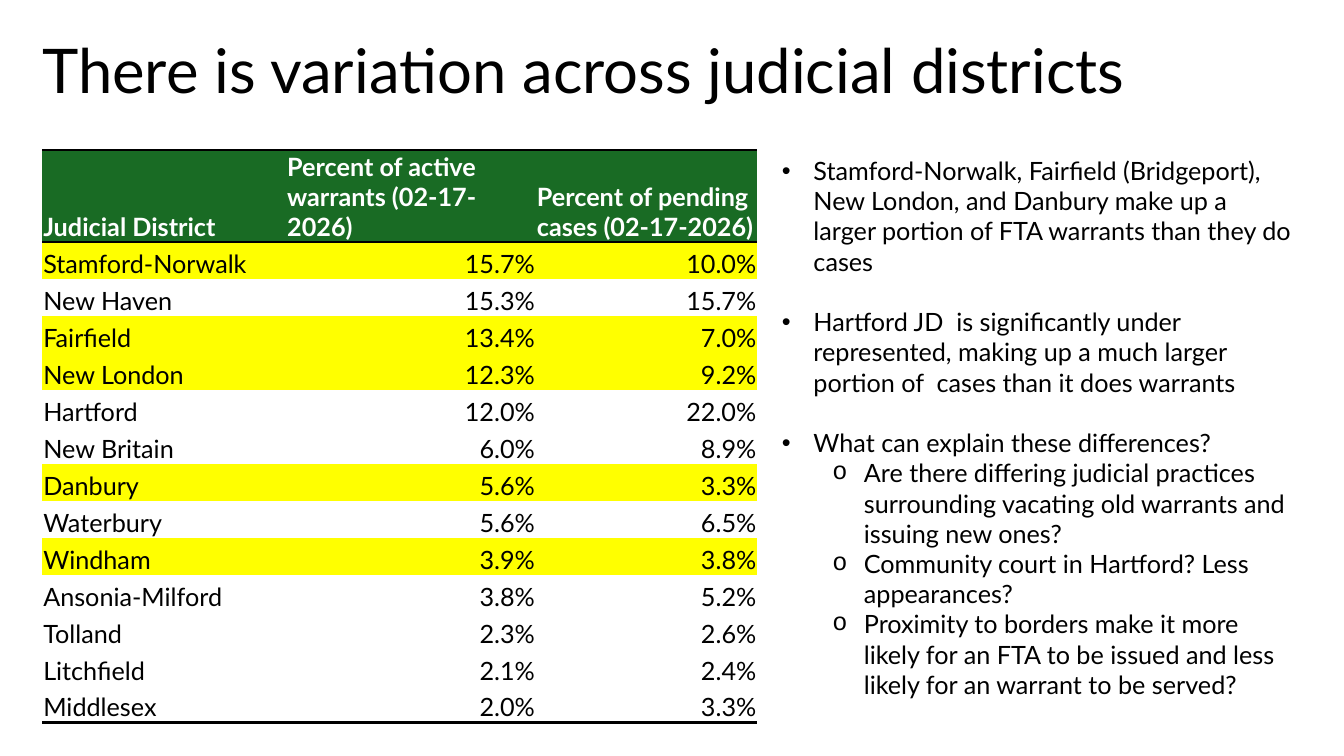
from lxml.etree import SubElement
from pptx import Presentation
from pptx.dml.color import RGBColor
from pptx.enum.text import MSO_ANCHOR as Anchor, MSO_AUTO_SIZE as AutoSize, PP_ALIGN as Align
from pptx.oxml import parse_xml
from pptx.oxml.ns import nsdecls, qn
from pptx.util import Pt

COLORS = {"text": "000000", "header": "196B24", "header_text": "FFFFFF",
          "highlight": "FFFF00", "plain": "FFFFFF", "rule": "000000"}
PLAIN_TABLE = "{2D5ABB26-0587-4C30-8999-92F81FD0307C}"
BULLETS = [("•", "Arial", 22.5), ("o", "Courier New", 58.5)]
HANGING = 22.5

HEADERS = ["Judicial District", "Percent of active warrants (02-17-2026)",
           "Percent of pending cases (02-17-2026)"]
DISTRICTS = [
    ("Stamford-Norwalk", 15.7, 10.0),
    ("New Haven", 15.3, 15.7),
    ("Fairfield", 13.4, 7.0),
    ("New London", 12.3, 9.2),
    ("Hartford", 12.0, 22.0),
    ("New Britain", 6.0, 8.9),
    ("Danbury", 5.6, 3.3),
    ("Waterbury", 5.6, 6.5),
    ("Windham", 3.9, 3.8),
    ("Ansonia-Milford", 3.8, 5.2),
    ("Tolland", 2.3, 2.6),
    ("Litchfield", 2.1, 2.4),
    ("Middlesex", 2.0, 3.3),
]
FINDINGS = [
    (0, "Stamford-Norwalk, Fairfield (Bridgeport), New London, and Danbury make up a "
        "larger portion of FTA warrants than they do cases"),
    (0, "Hartford JD  is significantly under represented, making up a much larger "
        "portion of  cases than it does warrants"),
    (0, "What can explain these differences?"),
    (1, "Are there differing judicial practices surrounding vacating old warrants "
        "and issuing new ones?"),
    (1, "Community court in Hartford? Less appearances?"),
    (1, "Proximity to borders make it more likely for an FTA to be issued and less "
        "likely for an warrant to be served?"),
]


class SlideBuilder:
    def __init__(self, slide, font="Lato", size=18):
        self.slide = slide
        self.font = font
        self.size = size

    def style(self, paragraph, color="text", size=None, bold=False):
        for run in paragraph.runs:
            run.font.name = self.font
            run.font.size = Pt(size or self.size)
            run.font.bold = bold
            run.font.color.rgb = RGBColor.from_string(COLORS[color])

    def title(self, text, left, top, width, height):
        heading = self.slide.shapes.title
        heading.left, heading.top = Pt(left), Pt(top)
        heading.width, heading.height = Pt(width), Pt(height)
        frame = heading.text_frame
        frame.text = text
        frame.auto_size = AutoSize.NONE
        frame.vertical_anchor = Anchor.MIDDLE
        line = frame.paragraphs[0]
        line.alignment = Align.LEFT
        line.line_spacing = 0.9
        self.style(line, size=44)

    def bullets(self, items, left, top, width, height, gap):
        box = self.slide.shapes.add_textbox(Pt(left), Pt(top), Pt(width), Pt(height))
        frame = box.text_frame
        frame.word_wrap = True
        frame.auto_size = AutoSize.SHAPE_TO_FIT_TEXT
        for index, (level, text) in enumerate(items):
            item = frame.paragraphs[0] if index == 0 else frame.add_paragraph()
            item.text = text
            item.level = level
            if index and level == 0:
                item.space_before = Pt(gap)
            mark, mark_font, indent = BULLETS[level]
            props = item._p.get_or_add_pPr()
            props.set("marL", str(Pt(indent)))
            props.set("indent", str(-Pt(HANGING)))
            SubElement(props, qn("a:buFont"), typeface=mark_font)
            SubElement(props, qn("a:buChar"), char=mark)
            self.style(item)

    def rules(self, cell, sides):
        for position, side in enumerate(sides):
            cell._tc.get_or_add_tcPr().insert(position, parse_xml(
                f'<a:ln{side} {nsdecls("a")} w="{Pt(2)}"><a:solidFill>'
                f'<a:srgbClr val="{COLORS["rule"]}"/></a:solidFill></a:ln{side}>'))

    def cell(self, cell, text, fill, color="text", bold=False, align=Align.LEFT, sides=""):
        cell.text = text
        cell.vertical_anchor = Anchor.BOTTOM
        cell.margin_left = cell.margin_right = cell.margin_top = Pt(0.75)
        cell.margin_bottom = 0
        cell.fill.solid()
        cell.fill.fore_color.rgb = RGBColor.from_string(COLORS[fill])
        line = cell.text_frame.paragraphs[0]
        line.alignment = align
        self.style(line, color, bold=bold)
        self.rules(cell, sides)

    def table(self, headers, records, highlighted, left, top, widths, header_height, row_height):
        height = header_height + row_height * len(records)
        frame = self.slide.shapes.add_table(len(records) + 1, len(headers), Pt(left), Pt(top),
                                            Pt(sum(widths)), Pt(height))
        table = frame.table
        table.horz_banding = False
        table._tbl.tblPr.find(qn("a:tableStyleId")).text = PLAIN_TABLE
        for column, width in zip(table.columns, widths):
            column.width = Pt(width)
        for row in table.rows:
            row.height = Pt(row_height)
        table.rows[0].height = Pt(header_height)
        for column, header in enumerate(headers):
            self.cell(table.cell(0, column), header, "header", "header_text", bold=True, sides="TB")
        for row, (district, *shares) in enumerate(records, 1):
            fill = "highlight" if district in highlighted else "plain"
            sides = "B" if row == len(records) else ""
            self.cell(table.cell(row, 0), district, fill, sides=sides)
            for column, share in enumerate(shares, 1):
                self.cell(table.cell(row, column), f"{share:.1f}%", fill,
                          align=Align.RIGHT, sides=sides)


def main():
    deck = Presentation()
    deck.slide_width, deck.slide_height = Pt(960), Pt(540)
    builder = SlideBuilder(deck.slides.add_slide(deck.slide_layouts[5]))
    builder.title("There is variation across judicial districts", 23, 0, 828, 104.4)
    builder.bullets(FINDINGS, 551.5, 107.3, 378.7, 422, gap=21.6)
    builder.table(HEADERS, DISTRICTS,
                  {"Stamford-Norwalk", "Fairfield", "New London", "Danbury", "Windham"},
                  30.2, 107.3, [174.2, 178.4, 158.2], header_height=52, row_height=26.4)
    deck.save("out.pptx")


if __name__ == "__main__":
    main()
